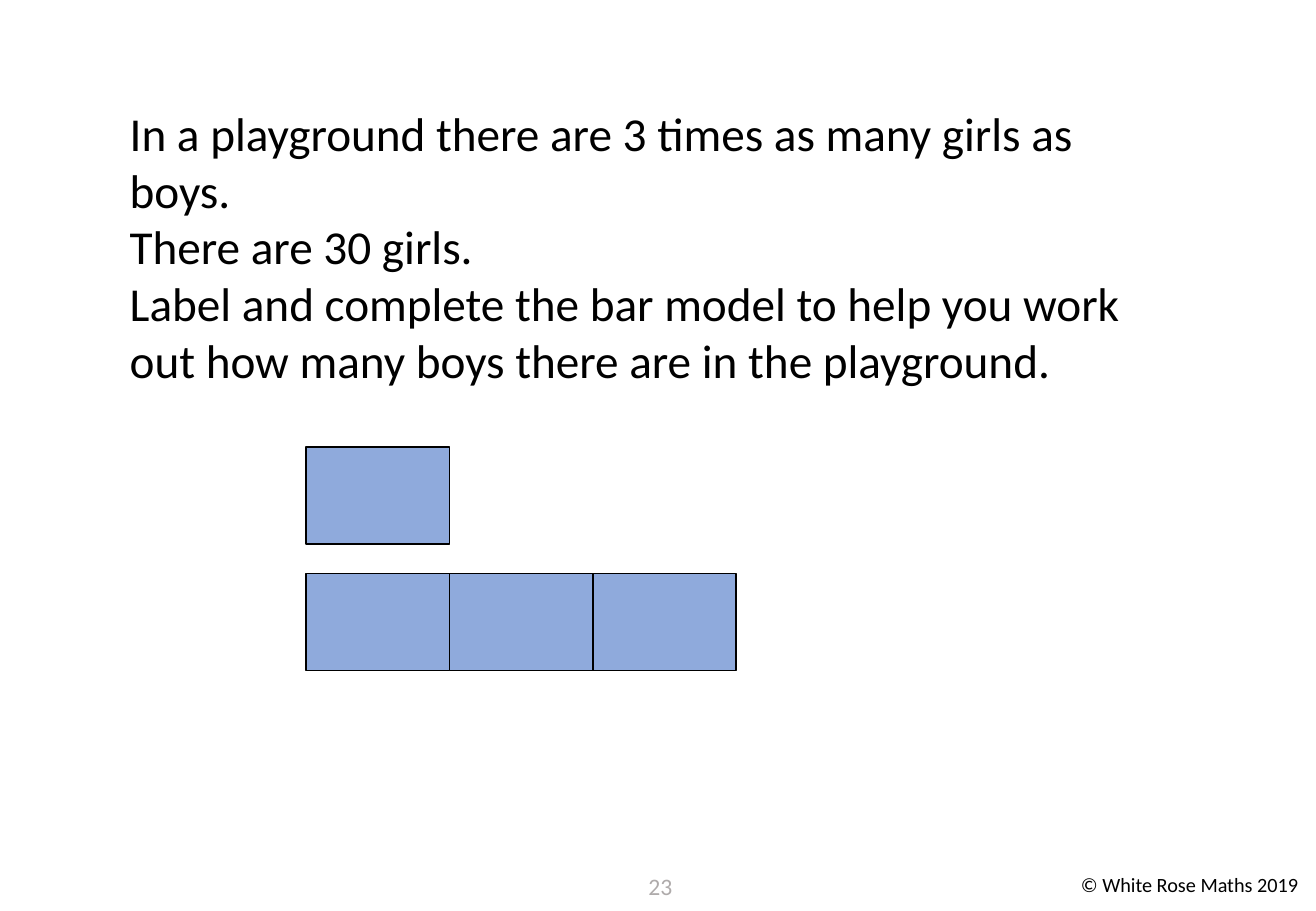
"""Builds a bar model question slide about girls and boys in a playground."""
from pptx import Presentation
from pptx.dml.color import RGBColor
from pptx.enum.shapes import MSO_SHAPE
from pptx.enum.text import PP_ALIGN
from pptx.util import Pt

RECTANGLE = MSO_SHAPE.RECTANGLE
LEFT, CENTER = PP_ALIGN.LEFT, PP_ALIGN.CENTER

QUESTION = [
    "In a playground there are 3 times as many girls as boys.",
    "There are 30 girls.",
    "Label and complete the bar model to help you work out how many boys there are in the playground.",
]
COPYRIGHT = ["© White Rose Maths 2019"]
PAGE_NUMBER = ["23"]
BARS = {"boys": 1, "girls": 3}

THEME = {
    "font": "Calibri",
    "ink": RGBColor(0x00, 0x00, 0x00),
    "muted": RGBColor(0xAF, 0xAB, 0xAB),
    "bar": RGBColor(0x8F, 0xAA, 0xDC),
    "question": 28,
    "number": 14,
    "copyright": 12,
}
PAGE_SIZE = (780, 540)
BAR_ORIGIN = (181.4, 265)
UNIT = (85, 57.6)
ROW_STEP = 74.9


def add_text(page, lines, place, size, colour, align=LEFT):
    box = page.shapes.add_textbox(*map(Pt, place))
    frame = box.text_frame
    frame.word_wrap = True
    for index, line in enumerate(lines):
        para = frame.add_paragraph() if index else frame.paragraphs[0]
        para.alignment = align
        span = para.add_run()
        span.text = line
        span.font.name = THEME["font"]
        span.font.size = Pt(THEME[size])
        span.font.color.rgb = THEME[colour]


def add_unit(page, row, column):
    left = BAR_ORIGIN[0] + column * UNIT[0]
    top = BAR_ORIGIN[1] + row * ROW_STEP
    unit = page.shapes.add_shape(RECTANGLE, Pt(left), Pt(top), *map(Pt, UNIT))
    unit.shadow.inherit = False
    unit.fill.solid()
    unit.fill.fore_color.rgb = THEME["bar"]
    unit.line.color.rgb = THEME["ink"]
    unit.line.width = Pt(1)


def main():
    deck = Presentation()
    deck.slide_width, deck.slide_height = map(Pt, PAGE_SIZE)
    page = deck.slides.add_slide(deck.slide_layouts[6])
    add_text(page, COPYRIGHT, (633.6, 513.4, 195, 21.8), "copyright", "ink")
    add_text(page, PAGE_NUMBER, (373, 513.4, 36.7, 28.8), "number", "muted", CENTER)
    add_text(page, QUESTION, (69.8, 58.3, 634.3, 414.7), "question", "ink")
    for row, units in enumerate(BARS.values()):
        for column in range(units):
            add_unit(page, row, column)
    deck.save("out.pptx")


if __name__ == "__main__":
    main()
